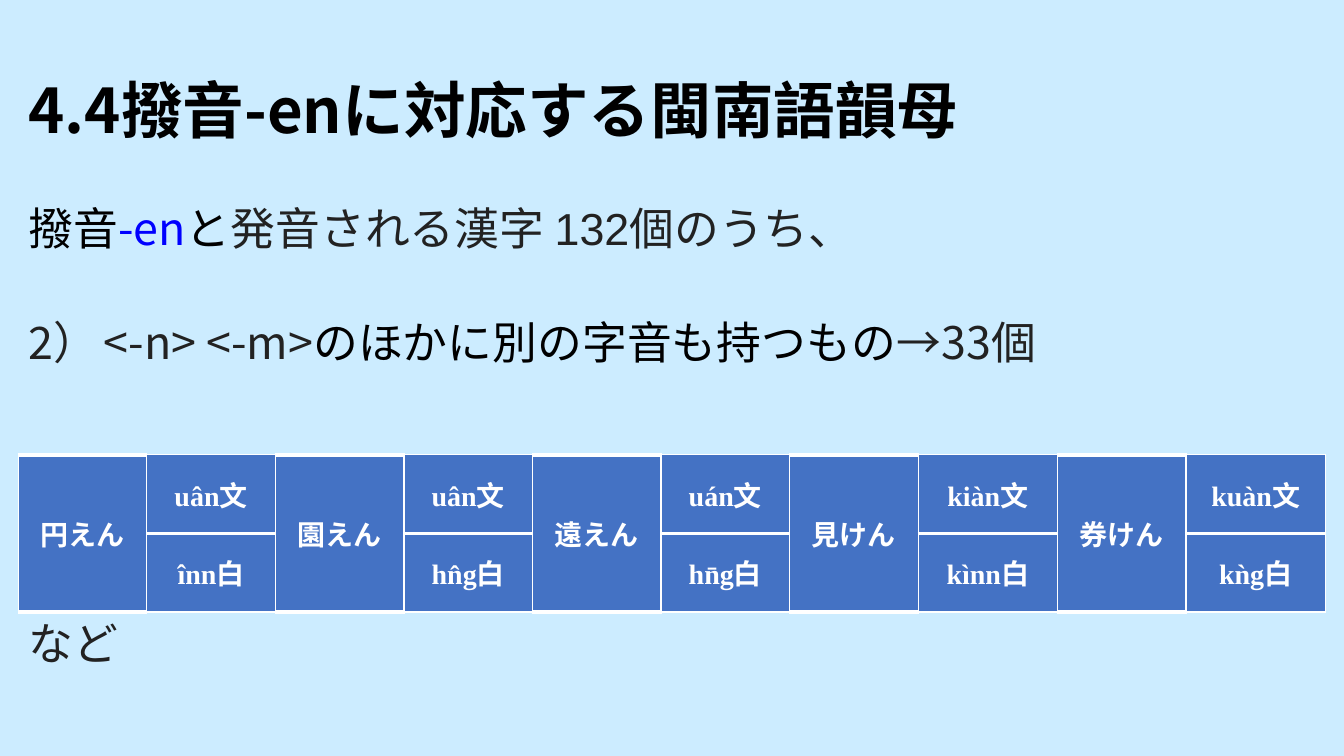
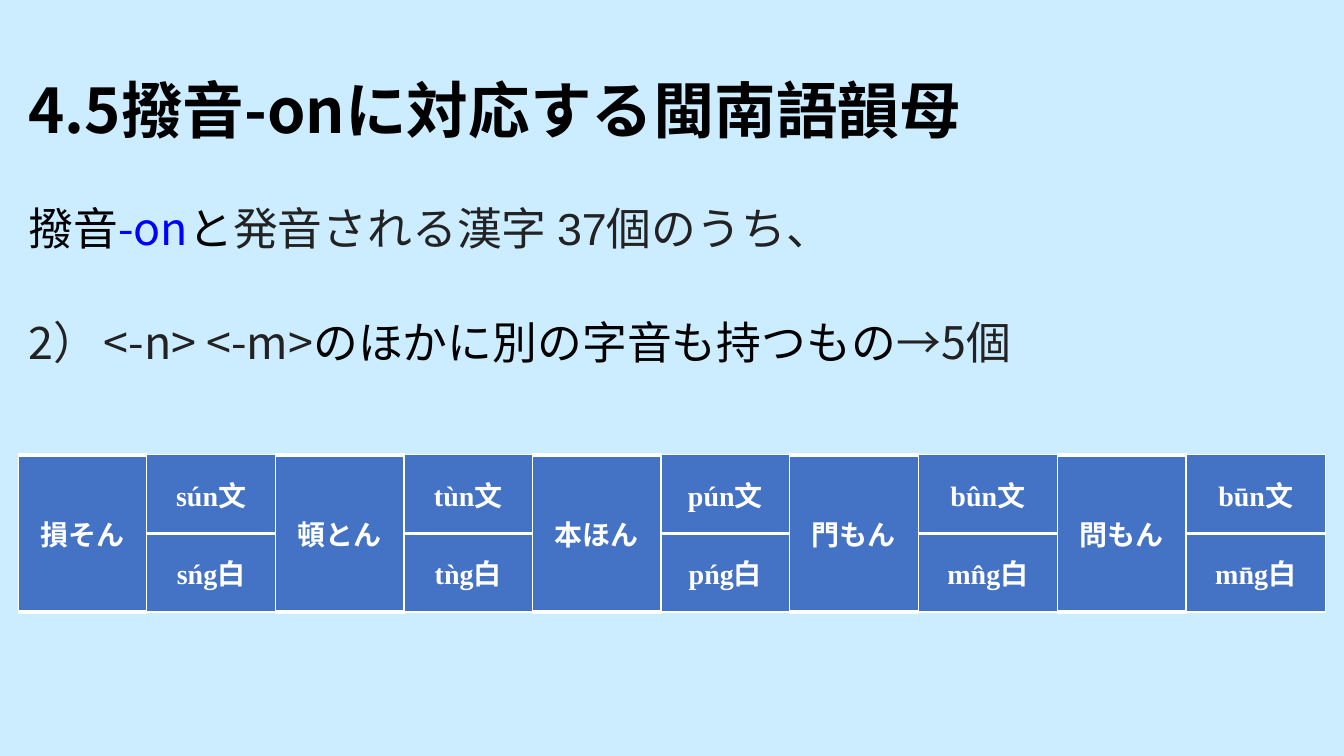
"""Two slides on Min Nan rhymes matching Japanese syllabic nasals."""
from lxml import etree
from pptx import Presentation
from pptx.dml.color import RGBColor
from pptx.enum.text import MSO_ANCHOR, MSO_AUTO_SIZE, PP_ALIGN
from pptx.oxml.ns import qn
from pptx.util import Cm, Pt

LEFT, CENTER = PP_ALIGN.LEFT, PP_ALIGN.CENTER
MIDDLE, FIXED = MSO_ANCHOR.MIDDLE, MSO_AUTO_SIZE.NONE
SANS, ARIAL, SERIF = "Noto Sans CJK JP", "Arial", "Times New Roman"
SKY, BLUE, WHITE = "CCECFF", "4472C4", "FFFFFF"
BLACK, DARK, MARK = "000000", "222222", "0000FF"

EDGE, WIDE = 0.46, 32.92
TITLE = (EDGE, 1.02, WIDE, 3.68)
BODY = (EDGE, 5.08, WIDE, 13.74)
GRID = (EDGE, 11.46, WIDE, 3.96)
COLS = [3.24] * 7 + [3.51, 3.24, 3.51]
GAPS = [10, 47, 180]
THIN, THICK = 1, 3

PAGES = [
    {
        "title": "4.4撥音-enに対応する閩南語韻母",
        "rime": "-en", "total": "132", "count": "33", "tail": "など",
        "words": [
            ("円えん", "uân文", "înn白"),
            ("園えん", "uân文", "hn̂g白"),
            ("遠えん", "uán文", "hn̄g白"),
            ("見けん", "kiàn文", "kìnn白"),
            ("券けん", "kuàn文", "kǹg白"),
        ],
    },
    {
        "title": "4.5撥音-onに対応する閩南語韻母",
        "rime": "-on", "total": "37", "count": "5", "tail": "",
        "words": [
            ("損そん", "sún文", "sńg白"),
            ("頓とん", "tùn文", "tǹg白"),
            ("本ほん", "pún文", "pńg白"),
            ("門もん", "bûn文", "mn̂g白"),
            ("問もん", "būn文", "mn̄g白"),
        ],
    },
]


def rgb(code):
    return RGBColor.from_string(code)


def place(shape, box):
    shape.left, shape.top, shape.width, shape.height = map(Cm, box)


def write(para, text, size=32, font=SANS, color=DARK, bold=False):
    run = para.add_run()
    run.text = text
    run.font.size = Pt(size)
    run.font.name = font
    run.font.bold = bold
    run.font.color.rgb = rgb(color)
    east = etree.SubElement(run.font._element, qn("a:ea"))
    east.set("typeface", SANS)


def plain(para):
    props = para._p.get_or_add_pPr()
    props.set("marL", "0")
    props.set("indent", "0")
    etree.SubElement(props, qn("a:buNone"))


def lines(page):
    rows = [
        [
            ("撥音", {"color": BLACK}),
            (page["rime"], {"color": MARK}),
            ("と", {"color": BLACK}),
            ("発音される漢字 ", {}),
            (page["total"] + "個のうち、", {"font": ARIAL}),
        ],
        [
            ("2）", {}),
            (" ", {"size": 18, "font": SERIF, "color": BLACK}),
            ("<-n> <-m>", {}),
            ("のほかに別の字音も持つもの", {"font": ARIAL, "color": BLACK}),
            (f"→{page['count']}個", {}),
        ],
    ]
    if page["tail"]:
        rows.append([(page["tail"], {"font": ARIAL})])
    return rows


def fill_body(frame, page):
    for i, (runs, gap) in enumerate(zip(lines(page), GAPS)):
        para = frame.add_paragraph() if i else frame.paragraphs[0]
        para.line_spacing = 0.9
        para.space_before = Pt(gap)
        plain(para)
        for text, style in runs:
            write(para, text, **style)


def paint(cell, top, base):
    props = cell._tc.get_or_add_tcPr()
    for side, width in zip("LRTB", (THIN, THIN, top, base)):
        line = etree.SubElement(props, qn("a:ln" + side), w=str(Pt(width)))
        solid = etree.SubElement(line, qn("a:solidFill"))
        etree.SubElement(solid, qn("a:srgbClr"), val=WHITE)
    cell.fill.solid()
    cell.fill.fore_color.rgb = rgb(BLUE)
    cell.vertical_anchor = MIDDLE
    cell.margin_left = cell.margin_right = Cm(0.18)
    cell.margin_top = cell.margin_bottom = 0


def label(cell, text):
    para = cell.text_frame.paragraphs[0]
    para.alignment = CENTER
    write(para, text, size=20, font=SERIF, color=WHITE, bold=True)


def add_grid(slide, words):
    grid = slide.shapes.add_table(2, len(COLS), *map(Cm, GRID)).table
    grid.first_row = grid.horz_banding = False
    for col, width in zip(grid.columns, COLS):
        col.width = Cm(width)
    for i, (word, *reads) in enumerate(words):
        head = grid.cell(0, 2 * i)
        for row, read in enumerate(reads):
            paint(grid.cell(row, 2 * i), THICK, THICK)
            cell = grid.cell(row, 2 * i + 1)
            paint(cell, *((THICK, THIN) if row else (THIN, THICK)))
            label(cell, read)
        head.merge(grid.cell(1, 2 * i))
        label(head, word)


def add_page(deck, page):
    slide = deck.slides.add_slide(deck.slide_layouts[1])
    title, body = slide.placeholders
    place(title, TITLE)
    place(body, BODY)
    for shape in (title, body):
        shape.text_frame.auto_size = FIXED
    title.text_frame.vertical_anchor = MIDDLE
    para = title.text_frame.paragraphs[0]
    para.alignment = LEFT
    para.line_spacing = 0.9
    write(para, page["title"], size=44, color=BLACK, bold=True)
    fill_body(body.text_frame, page)
    add_grid(slide, page["words"])


def main():
    deck = Presentation()
    deck.slide_width, deck.slide_height = Cm(33.87), Cm(19.05)
    back = deck.slide_master.background.fill
    back.solid()
    back.fore_color.rgb = rgb(SKY)
    for page in PAGES:
        add_page(deck, page)
    deck.save("out.pptx")


if __name__ == "__main__":
    main()
